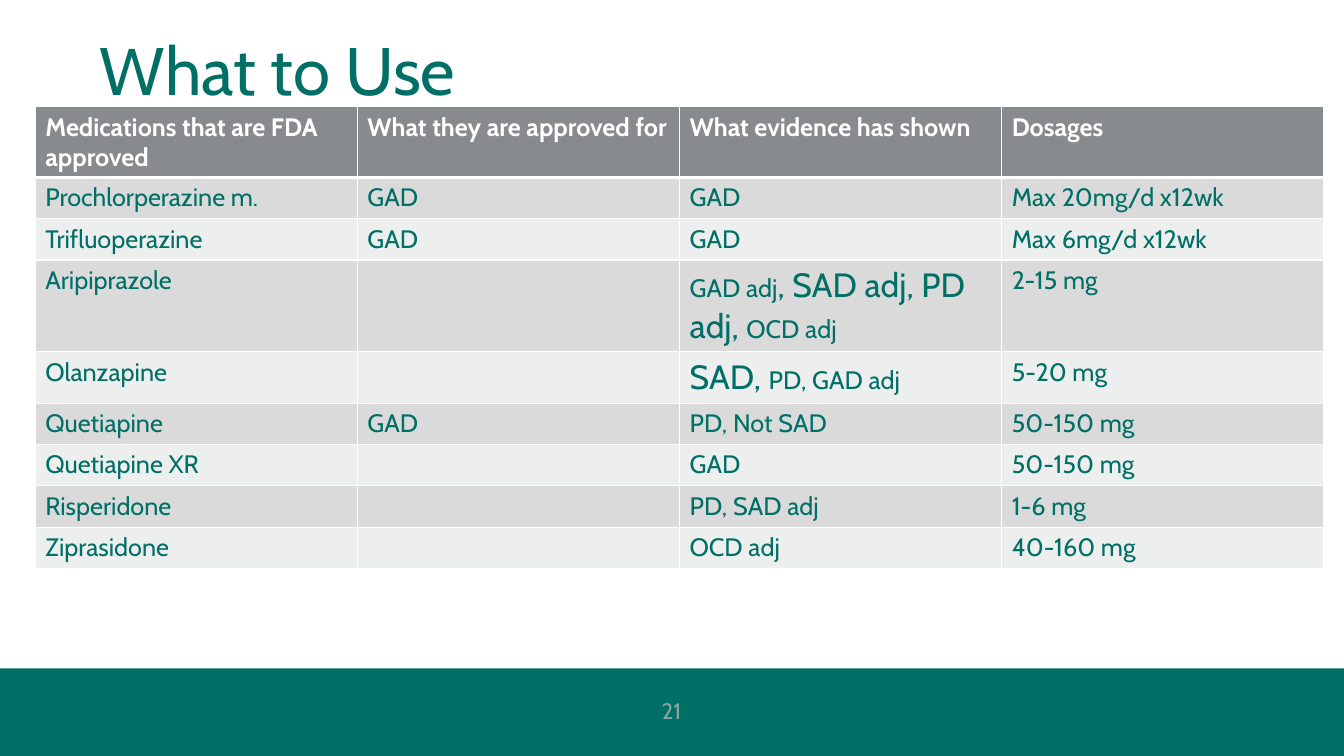
from lxml import etree
from pptx import Presentation
from pptx import util as u
from pptx.dml.color import RGBColor
from pptx.enum import shapes, text
from pptx.oxml.ns import qn

COLORS = {
    "teal": "006F66",
    "header": "888B8D",
    "band_dark": "DADADB",
    "band_light": "EDEEEE",
    "white": "FFFFFF",
    "page_number": "8CA4A0",
}

HEADINGS = ["Medications that are FDA approved", "What they are approved for ",
            "What evidence has shown", "Dosages"]

# Medication, approval, evidence as (text, size) runs or plain text, dosage
MEDICATIONS = [
    ["Prochlorperazine m.", "GAD", "GAD", "Max 20mg/d x12wk"],
    ["Trifluoperazine", "GAD", "GAD", "Max 6mg/d x12wk"],
    ["Aripiprazole", "",
     [("GAD adj", 18), (", SAD adj, PD adj, ", 24), ("OCD adj", 18)], "2-15 mg"],
    ["Olanzapine", "", [("SAD, ", 24), ("PD, GAD adj", 18)], "5-20 mg"],
    ["Quetiapine", "GAD", "PD, Not SAD", "50-150 mg"],
    ["Quetiapine XR", "", "GAD", "50-150 mg"],
    ["Risperidone", "", "PD, SAD adj", "1-6 mg"],
    ["Ziprasidone", "", "OCD adj", "40-160 mg"],
]
ROW_HEIGHT = 0.41
TALL_ROWS = {0: 0.7, 3: 0.91, 4: 0.51}


def rgb(name):
    return RGBColor.from_string(COLORS[name])


def add_text(paragraph, content, size=18, color="teal", bold=False, font="Cabin"):
    run = paragraph.add_run()
    run.text = content
    run.font.name = font
    run.font.size = u.Pt(size)
    run.font.bold = bold
    run.font.color.rgb = rgb(color)


def set_border(cell, side, width):
    line = etree.SubElement(cell._tc.get_or_add_tcPr(), qn(f"a:ln{side}"),
                            w=str(u.Pt(width)))
    fill = etree.SubElement(line, qn("a:solidFill"))
    etree.SubElement(fill, qn("a:srgbClr"), val=COLORS["white"])


class SlideBuilder:
    def __init__(self, deck):
        self.slide = deck.slides.add_slide(deck.slide_layouts[5])

    def title(self, content, box):
        heading = self.slide.shapes.title
        heading.left, heading.top, heading.width, heading.height = map(u.Inches, box)
        frame = heading.text_frame
        frame.auto_size = text.MSO_AUTO_SIZE.NONE
        frame.vertical_anchor = text.MSO_ANCHOR.TOP
        frame.paragraphs[0].alignment = text.PP_ALIGN.LEFT
        add_text(frame.paragraphs[0], content, size=48)

    def band(self, box, color):
        bar = self.slide.shapes.add_shape(shapes.MSO_SHAPE.RECTANGLE,
                                          *map(u.Inches, box))
        bar.shadow.inherit = False
        bar.fill.solid()
        bar.fill.fore_color.rgb = rgb(color)
        bar.line.fill.background()

    def label(self, content, box, **style):
        frame = self.slide.shapes.add_textbox(*map(u.Inches, box)).text_frame
        frame.word_wrap = True
        frame.vertical_anchor = text.MSO_ANCHOR.MIDDLE
        frame.paragraphs[0].alignment = text.PP_ALIGN.CENTER
        add_text(frame.paragraphs[0], content, **style)

    def table(self, rows, box, heights):
        grid = self.slide.shapes.add_table(len(rows), len(rows[0]),
                                           *map(u.Inches, box)).table
        for r, row in enumerate(rows):
            grid.rows[r].height = u.Inches(heights[r])
            for c, content in enumerate(row):
                self.cell(grid.cell(r, c), r, content)

    def cell(self, cell, row, content):
        is_header = row == 0
        widths = {"L": 1, "R": 1, "T": 3 if row == 1 else 1, "B": 3 if is_header else 1}
        for side, width in widths.items():
            set_border(cell, side, width)
        cell.fill.solid()
        band = "band_dark" if row % 2 else "band_light"
        cell.fill.fore_color.rgb = rgb("header" if is_header else band)
        runs = [(content, 18)] if isinstance(content, str) else content
        for words, size in runs:
            if words:
                add_text(cell.text_frame.paragraphs[0], words, size=size,
                         color="white" if is_header else "teal", bold=is_header)


def main():
    deck = Presentation()
    deck.slide_width, deck.slide_height = u.Inches(13.33), u.Inches(7.5)
    builder = SlideBuilder(deck)

    # Footer band and page number
    builder.band((0, 6.63, 13.33, 0.89), "teal")
    builder.label("21", (5.16, 6.85, 3, 0.4), size=16, color="page_number")

    # Title
    builder.title("What to Use", (0.89, 0.23, 12.16, 0.88))

    # Medication table
    rows = [HEADINGS] + MEDICATIONS
    heights = [TALL_ROWS.get(r, ROW_HEIGHT) for r in range(len(rows))]
    builder.table(rows, (0.35, 1.06, 12.78, sum(heights)), heights)

    deck.save("out.pptx")


if __name__ == "__main__":
    main()
